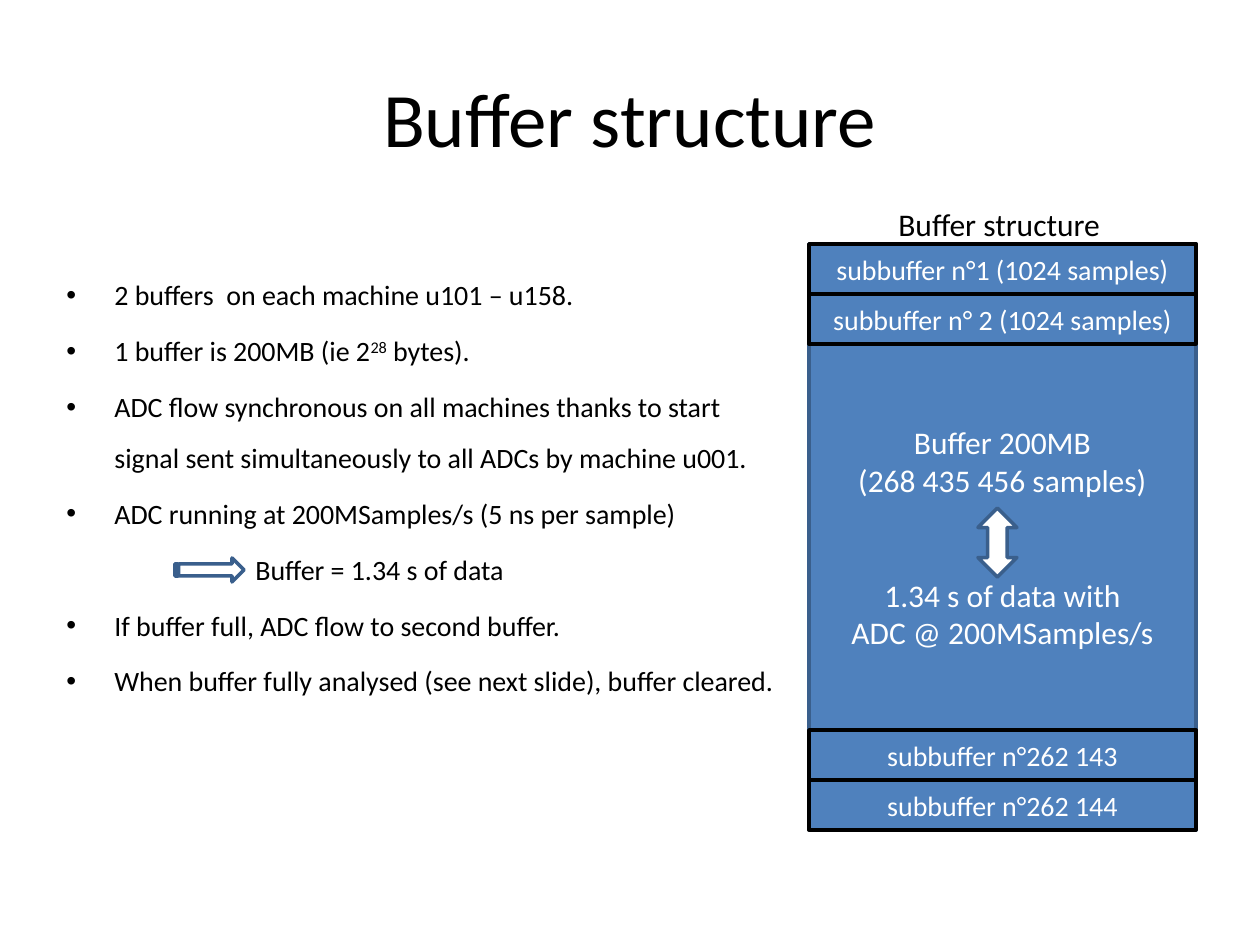
from lxml.etree import SubElement
from pptx import Presentation
from pptx.dml.color import RGBColor
from pptx.enum.shapes import MSO_SHAPE
from pptx.enum.text import MSO_ANCHOR, PP_ALIGN
from pptx.oxml.ns import qn
from pptx.util import Pt

BLUE, EDGE, BLACK, WHITE = "4F81BD", "3A5F8C", "000000", "FFFFFF"


def px(n):
    return round(n * 914400 / 126)


def place(x, y, w, h):
    return [px(n) for n in (x, y, w, h)]


def paint(part, tone):
    part.rgb = RGBColor.from_string(tone)


def write(para, text, size=16, tone=BLACK, align=PP_ALIGN.LEFT,
          lines=None, before=0, left=0, bullet=False):
    props = para._p.get_or_add_pPr()
    props.set("marL", str(px(left)))
    props.set("indent", str(-px(left) if bullet else 0))
    if bullet:
        SubElement(props, qn("a:buFont")).set("typeface", "Arial")
        SubElement(props, qn("a:buChar")).set("char", "•")
    para.alignment = align
    para.space_before = Pt(before)
    if lines:
        para.line_spacing = lines
    for order, part in enumerate(text.split("^")):
        run = para.add_run()
        run.text = part
        run.font.name = "Calibri"
        run.font.size = Pt(size)
        paint(run.font.color, tone)
        if order % 2:
            run._r.get_or_add_rPr().set("baseline", "30000")


def fill(frame, items, anchor=MSO_ANCHOR.MIDDLE, wrap=True, **style):
    frame.word_wrap = wrap
    frame.vertical_anchor = anchor
    for order, (text, extra) in enumerate(items):
        para = frame.add_paragraph() if order else frame.paragraphs[0]
        write(para, text, **{**style, **extra})


def label(slide, box, items, **style):
    fill(slide.shapes.add_textbox(*place(*box)).text_frame, items, **style)


def block(slide, kind, box, tone, edge):
    shape = slide.shapes.add_shape(kind, *place(*box))
    shape.shadow.inherit = False
    shape.fill.solid()
    paint(shape.fill.fore_color, tone)
    paint(shape.line.color, edge)
    shape.line.width = Pt(2)
    return shape


def title(slide, box):
    label(slide, box, [("Buffer structure", {})], size=44,
          align=PP_ALIGN.CENTER)


def notes(slide, box):
    x, y, w, h = box
    point = {"left": 48, "bullet": True, "before": 3.2}
    items = [
        ("2 buffers  on each machine u101 – u158.", {**point, "before": 0}),
        ("1 buffer is 200MB (ie 2^28^ bytes).", point),
        ("ADC flow synchronous on all machines thanks to start signal sent "
         "simultaneously to all ADCs by machine u001.", point),
        ("ADC running at 200MSamples/s (5 ns per sample)", point),
        ("Buffer = 1.34 s of data", {"left": 189, "before": 3.2}),
        ("If buffer full, ADC flow to second buffer.", point),
        ("When buffer fully analysed (see next slide), buffer cleared.",
         point),
    ]
    label(slide, box, items, anchor=MSO_ANCHOR.TOP, lines=1.5)
    block(slide, MSO_SHAPE.STRIPED_RIGHT_ARROW, (x + 121, y + 303, 69, 24),
          WHITE, EDGE)


def buffer(slide, box):
    x, y, w, h = box
    row = 50
    style = {"tone": WHITE, "align": PP_ALIGN.CENTER}
    label(slide, (x + 77, y - 45, 229, 50), [("Buffer structure", {})],
          size=18, wrap=False, anchor=MSO_ANCHOR.TOP)
    body = block(slide, MSO_SHAPE.RECTANGLE, box, BLUE, EDGE)
    fill(body.text_frame, [
        ("Buffer 200MB", {}),
        ("(268 435 456 samples)", {}),
        ("1.34 s of data with", {"before": 44}),
        ("ADC @ 200MSamples/s", {}),
    ], size=18, **style)
    rows = [
        (0, "subbuffer n°1 (1024 samples)"),
        (row, "subbuffer n° 2 (1024 samples)"),
        (h - 2 * row, "subbuffer n°262 143"),
        (h - row, "subbuffer n°262 144"),
    ]
    for top, text in rows:
        cell = block(slide, MSO_SHAPE.RECTANGLE, (x, y + top, w, row),
                     BLUE, BLACK)
        fill(cell.text_frame, [(text, {})], **style)
    block(slide, MSO_SHAPE.UP_DOWN_ARROW, (x + 169, y + 264, 39, 69),
          WHITE, EDGE)


def main():
    deck = Presentation()
    deck.slide_width, deck.slide_height = px(1260), px(945)
    slide = deck.slides.add_slide(deck.slide_layouts[6])
    title(slide, (63, 38, 1134, 157))
    notes(slide, (54, 255, 746, 456))
    buffer(slide, (809, 244, 387, 586))
    deck.save("out.pptx")


if __name__ == "__main__":
    main()
